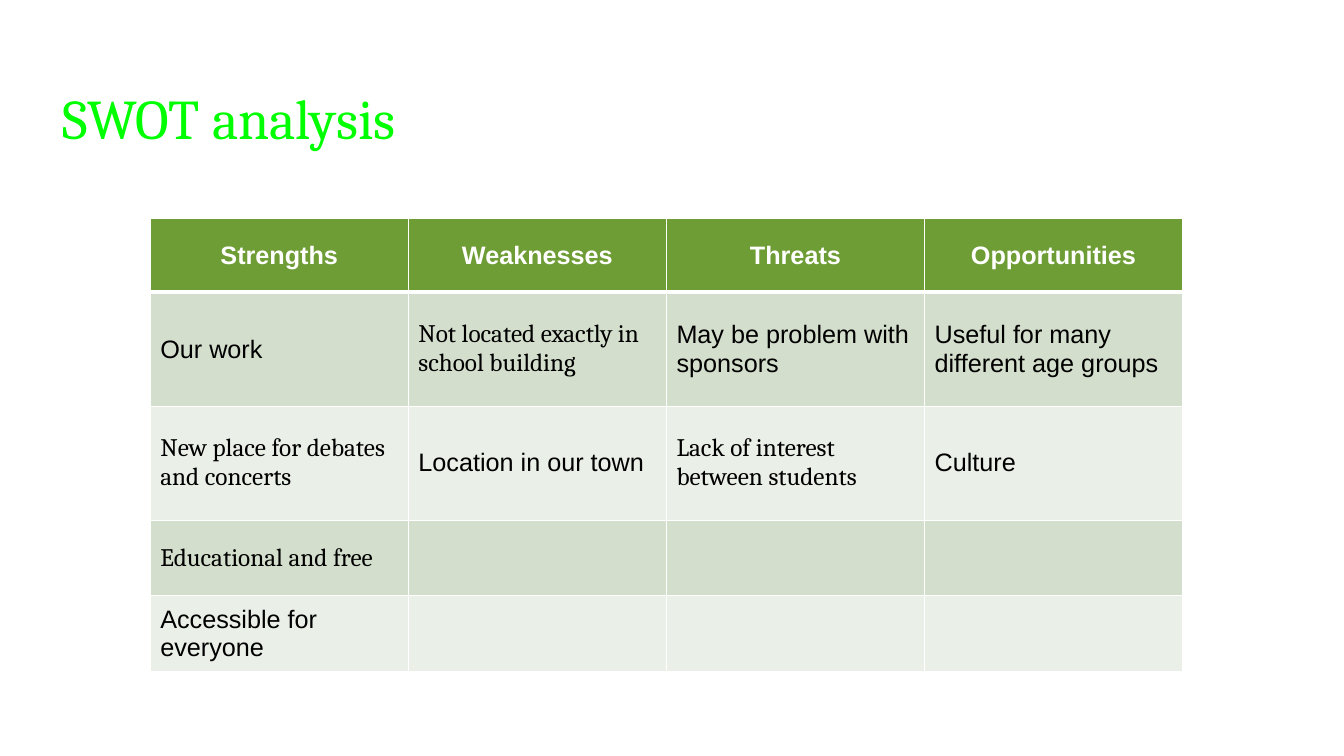
from lxml import etree
from pptx import Presentation
from pptx.dml.color import RGBColor
from pptx.enum.text import MSO_ANCHOR as Anchor, PP_ALIGN as Align
from pptx.oxml.ns import qn
from pptx.util import Inches, Pt

COLORS = {"title": "00FF00", "header": "6E9D35", "odd": "D4DECC",
          "even": "EAEFE7", "white": "FFFFFF", "black": "000000"}
SANS, SERIF = "Arial", "Cambria"
HEADERS = ["Strengths", "Weaknesses", "Threats", "Opportunities"]
ENTRIES = [
    [("Our work", SANS), ("Not located exactly in school building", SERIF),
     ("May be problem with sponsors", SANS),
     ("Useful for many different age groups", SANS)],
    [("New place for debates and concerts", SERIF), ("Location in our town", SANS),
     ("Lack of interest between students", SERIF), ("Culture", SANS)],
    [("Educational and free", SERIF)],
    [("Accessible for everyone", SANS)],
]
ROW_HEIGHTS = [0.73, 1.13, 1.13, 0.75, 0.75]


def rgb(name):
    return RGBColor.from_string(COLORS[name])


def style_run(r, font, size, color, bold=False):
    r.font.name, r.font.size, r.font.bold = font, Pt(size), bold
    r.font.color.rgb = rgb(color)


def add_title(s, x, y, w, h):
    tf = s.shapes.add_textbox(Inches(x), Inches(y), Inches(w), Inches(h)).text_frame
    tf.word_wrap = True
    tf.vertical_anchor = Anchor.BOTTOM
    tf.text = "SWOT analysis"
    p = tf.paragraphs[0]
    p.line_spacing = 0.8
    style_run(p.runs[0], SERIF, 40, "title")


def set_borders(cell, top, bottom):
    """Draw white cell edges; top and bottom are widths in points."""
    tcPr = cell._tc.get_or_add_tcPr()
    for edge, width in (("lnL", 1), ("lnR", 1), ("lnT", top), ("lnB", bottom)):
        ln = etree.SubElement(tcPr, qn(f"a:{edge}"), w=str(Pt(width)))
        fill = etree.SubElement(ln, qn("a:solidFill"))
        etree.SubElement(fill, qn("a:srgbClr"), val=COLORS["white"])


def fill_cell(cell, row, text, font):
    set_borders(cell, 3 if row == 1 else 1, 3 if row == 0 else 1)
    cell.fill.solid()
    cell.fill.fore_color.rgb = rgb("header" if row == 0 else "odd" if row % 2 else "even")
    cell.vertical_anchor = Anchor.MIDDLE
    if text:
        cell.text_frame.text = text
        p = cell.text_frame.paragraphs[0]
        p.alignment = Align.CENTER if row == 0 else Align.LEFT
        style_run(p.runs[0], font, 18, "black" if row else "white", bold=row == 0)


def add_swot_table(s, x, y, w):
    rows = [[(header, SANS) for header in HEADERS]] + ENTRIES
    table = s.shapes.add_table(len(rows), len(HEADERS), Inches(x), Inches(y),
                               Inches(w), Inches(sum(ROW_HEIGHTS))).table
    for row, entries in enumerate(rows):
        table.rows[row].height = Inches(ROW_HEIGHTS[row])
        for col in range(len(HEADERS)):
            text, font = entries[col] if col < len(entries) else ("", SANS)
            fill_cell(table.cell(row, col), row, text, font)


def main():
    prs = Presentation()
    prs.slide_width, prs.slide_height = Inches(13.33), Inches(7.5)
    s = prs.slides.add_slide(prs.slide_layouts[6])
    add_title(s, 0.52, 0.29, 10.5, 1.25)
    add_swot_table(s, 1.49, 2.17, 10.24)
    prs.save("out.pptx")


if __name__ == "__main__":
    main()
